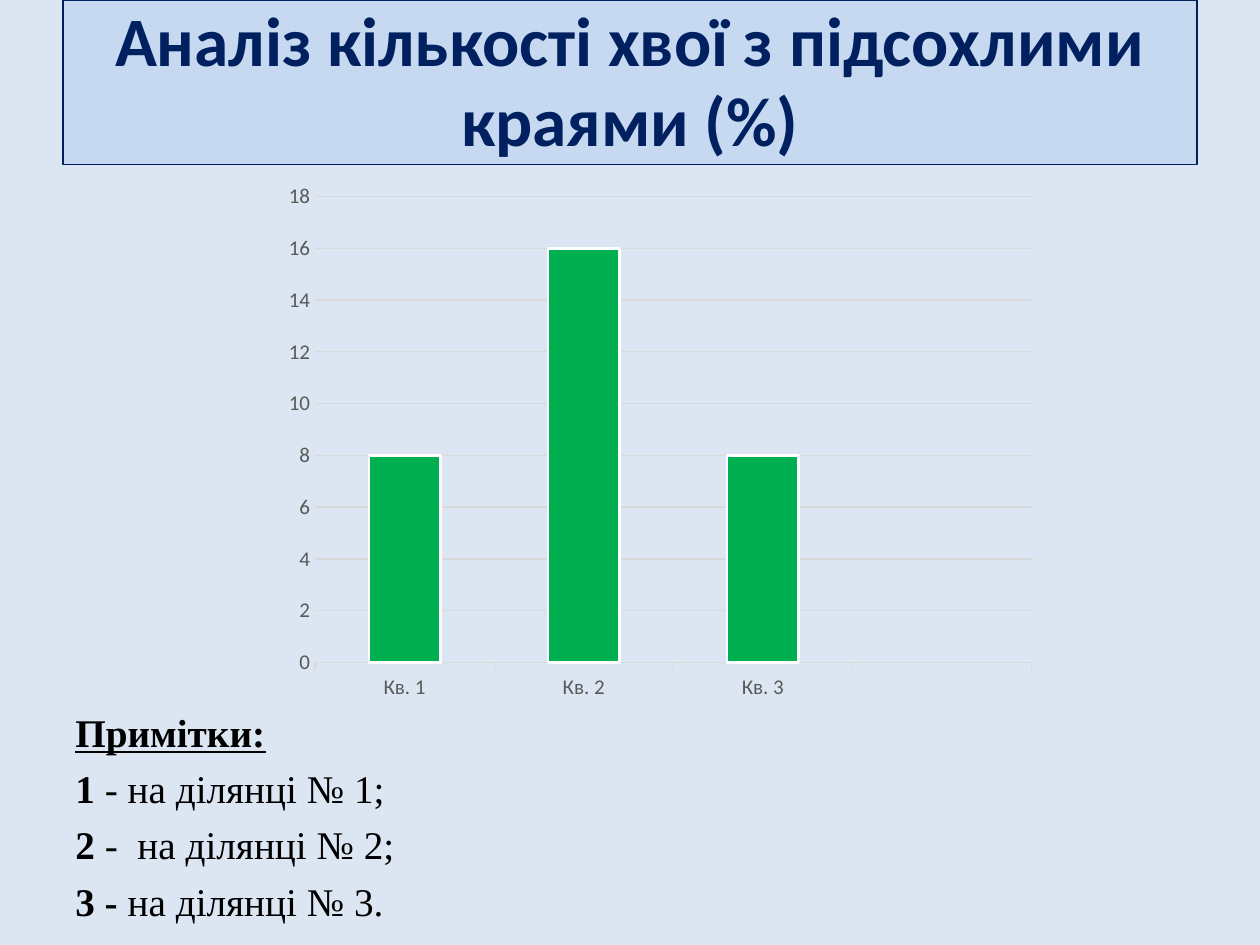
from lxml.etree import SubElement
from pptx import Presentation
from pptx.chart.data import CategoryChartData
from pptx.dml.color import RGBColor
from pptx.enum.chart import XL_CHART_TYPE, XL_TICK_MARK
from pptx.enum.shapes import MSO_SHAPE
from pptx.enum.text import MSO_ANCHOR, PP_ALIGN
from pptx.oxml.ns import qn
from pptx.util import Cm, Pt

PALE = RGBColor(0xDC, 0xE6, 0xF2)
SKY = RGBColor(0xC6, 0xD9, 0xF1)
NAVY = RGBColor(0x00, 0x20, 0x60)
GREEN = RGBColor(0x00, 0xB0, 0x50)
WHITE = RGBColor(0xFF, 0xFF, 0xFF)
BLACK = RGBColor(0x00, 0x00, 0x00)
GREY = RGBColor(0x59, 0x59, 0x59)
RULE = RGBColor(0xD9, 0xD9, 0xD9)

TITLE = "Аналіз кількості хвої з підсохлими краями (%)"
DATA = [("Кв. 1", 8), ("Кв. 2", 16), ("Кв. 3", 8), ("", None)]
# Each note is a bold lead and a plain tail
NOTES = [
    ("Примітки:", ""),
    ("1 ", "- на ділянці № 1;"),
    ("2 ", "-  на ділянці № 2;"),
    ("3 - ", "на ділянці № 3."),
]


def add_run(para, text, face, size, color, bold=False):
    run = para.add_run()
    run.text = text
    font = run.font
    font.name, font.size, font.bold = face, Pt(size), bold
    font.color.rgb = color
    return run


def add_title(slide, box):
    shape = slide.shapes.add_shape(MSO_SHAPE.RECTANGLE, *box)
    shape.shadow.inherit = False
    shape.fill.solid()
    shape.fill.fore_color.rgb = SKY
    shape.line.color.rgb = NAVY
    shape.line.width = Pt(0.75)
    frame = shape.text_frame
    frame.word_wrap = True
    frame.vertical_anchor = MSO_ANCHOR.MIDDLE
    para = frame.paragraphs[0]
    para.alignment = PP_ALIGN.CENTER
    para.line_spacing = 0.97
    add_run(para, TITLE, "Calibri", 39.6, NAVY, True)


def set_plot(chart, **parts):
    """Fix the inner plot area, in fractions of the chart."""
    area = chart.plots[0]._element.getparent()
    for old in area.findall(qn("c:layout")):
        area.remove(old)
    layout = SubElement(area, qn("c:layout"))
    area.insert(0, layout)
    manual = SubElement(layout, qn("c:manualLayout"))
    modes = {"layoutTarget": "inner", "xMode": "edge", "yMode": "edge"}
    for tag, val in {**modes, **parts}.items():
        SubElement(manual, qn(f"c:{tag}")).set("val", str(val))


def style_axis(axis):
    font = axis.tick_labels.font
    font.name, font.size = "Calibri", Pt(12)
    font.color.rgb = GREY


def add_bars(slide, box):
    data = CategoryChartData()
    data.categories = [name for name, _ in DATA]
    data.add_series("Series 1", [val for _, val in DATA])
    frame = slide.shapes.add_chart(XL_CHART_TYPE.COLUMN_CLUSTERED, *box, data)
    chart = frame.chart
    chart.has_legend = chart.has_title = False
    chart.font.name, chart.font.size = "Calibri", Pt(10)
    chart.font.color.rgb = BLACK
    set_plot(chart, x=0.06, y=0.04, w=0.92, h=0.87)

    cat, val = chart.category_axis, chart.value_axis
    style_axis(cat)
    style_axis(val)
    cat.major_tick_mark = XL_TICK_MARK.OUTSIDE
    val.major_tick_mark = XL_TICK_MARK.NONE
    val.minimum_scale, val.maximum_scale, val.major_unit = 0, 18, 2
    val.format.line.fill.background()
    for line in (cat.format.line, val.major_gridlines.format.line):
        line.color.rgb = RULE
        line.width = Pt(0.75)

    plot = chart.plots[0]
    plot.vary_by_categories = False
    plot.gap_width = 150
    style = plot.series[0].format
    style.fill.solid()
    style.fill.fore_color.rgb = GREEN
    style.line.color.rgb = WHITE
    style.line.width = Pt(1.5)


def add_notes(slide, box):
    frame = slide.shapes.add_textbox(*box).text_frame
    frame.word_wrap = True
    for i, (lead, tail) in enumerate(NOTES):
        para = frame.add_paragraph() if i else frame.paragraphs[0]
        props = para._p.get_or_add_pPr()
        props.set("marL", str(Cm(0.95)))
        props.set("indent", str(-Cm(0.95)))
        if i:
            para.space_before = Pt(5.3)
        head = add_run(para, lead, "Times New Roman", 22.4, BLACK, True)
        if tail:
            add_run(para, tail, "Times New Roman", 22.4, BLACK)
        else:
            head.font.underline = True


def main():
    deck = Presentation()
    deck.slide_width, deck.slide_height = Cm(25.4), Cm(19.05)
    slide = deck.slides.add_slide(deck.slide_layouts[6])
    fill = slide.background.fill
    fill.solid()
    fill.fore_color.rgb = PALE
    add_title(slide, (Cm(1.27), Cm(0), Cm(22.86), Cm(3.32)))
    add_notes(slide, (Cm(1.27), Cm(14.15), Cm(22.86), Cm(4)))
    add_bars(slide, (Cm(5.41), Cm(3.53), Cm(15.7), Cm(10.8)))
    deck.save("out.pptx")


if __name__ == "__main__":
    main()
